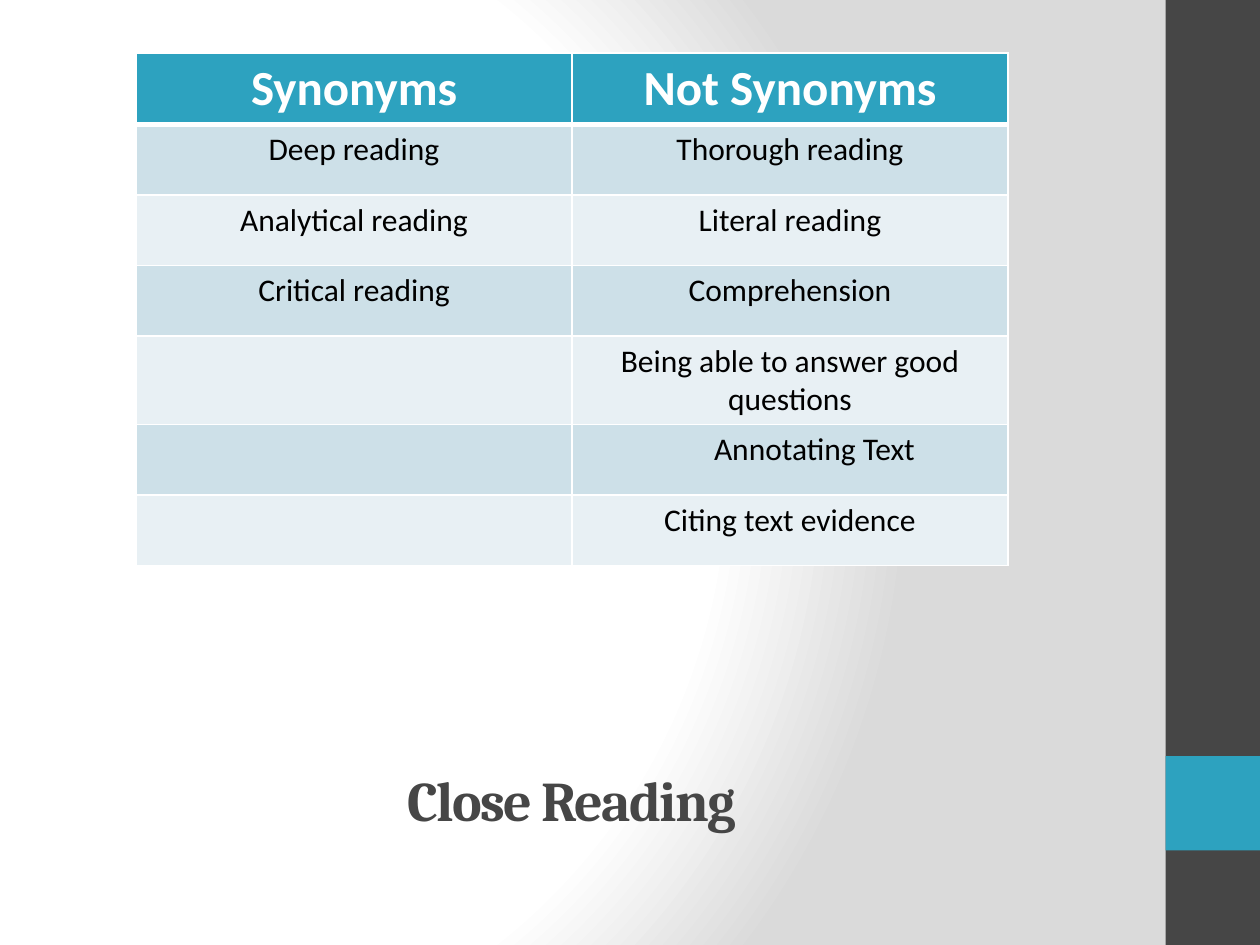
from pptx import Presentation
from pptx.dml.color import RGBColor
from pptx.enum.shapes import MSO_SHAPE
from pptx.enum.text import MSO_ANCHOR, PP_ALIGN
from pptx.oxml import parse_xml
from pptx.oxml.ns import nsdecls
from pptx.util import Inches, Pt

RECTANGLE = MSO_SHAPE.RECTANGLE
CENTER = PP_ALIGN.CENTER
BOTTOM = MSO_ANCHOR.BOTTOM

WHITE = RGBColor(0xFF, 0xFF, 0xFF)
BLACK = RGBColor(0x00, 0x00, 0x00)
SILVER = RGBColor(0xDA, 0xDA, 0xDA)
CHARCOAL = RGBColor(0x46, 0x46, 0x46)
TEAL = RGBColor(0x2D, 0xA2, 0xBF)
BANDS = RGBColor(0xE8, 0xF0, 0xF4), RGBColor(0xCD, 0xE0, 0xE8)

WIDTH, HEIGHT = Inches(10), Inches(7.5)
UNIT = HEIGHT // 10  # the sidebar is one unit wide, its accent one unit square
COLUMN, ROW = Inches(3.46), Inches(0.56)

WORDS = [
    ("Synonyms", "Not Synonyms"),
    ("Deep reading", "Thorough reading"),
    ("Analytical reading", "Literal reading"),
    ("Critical reading", "Comprehension"),
    ("", "Being able to answer good questions"),
    ("", "Annotating Text"),
    ("", "Citing text evidence"),
]


def write_text(frame, text, *, font="Calibri", size=18, color=BLACK, bold=False, spacing=0):
    """Fill the frame with one centred line; spacing is in hundredths of a point."""
    para = frame.paragraphs[0]
    para.alignment = CENTER
    para.font.size = Pt(size)
    if not text:
        return
    span = para.add_run()
    span.text = text
    span.font.name = font
    span.font.size = Pt(size)
    span.font.bold = bold
    span.font.color.rgb = color
    if spacing:
        span.font._element.set("spc", str(spacing))


def add_borders(cell, **widths):
    """Draw white borders; widths in points are keyed by side: L, R, T, B."""
    properties = cell._tc.get_or_add_tcPr()
    for side, width in widths.items():
        properties.append(parse_xml(
            f'<a:ln{side} {nsdecls("a")} w="{Pt(width)}"><a:solidFill>'
            f'<a:srgbClr val="{WHITE}"/></a:solidFill></a:ln{side}>'))


deck = Presentation()
deck.slide_width, deck.slide_height = WIDTH, HEIGHT
page = deck.slides.add_slide(deck.slide_layouts[6])

# Background: a white circle fading to silver
stops = "".join(
    f'<a:gs pos="{share * 1000}"><a:srgbClr val="{color}"/></a:gs>'
    for share, color in [(0, WHITE), (75, WHITE), (100, SILVER)])
page._element.cSld.insert(0, parse_xml(
    f'<p:bg {nsdecls("p", "a")}><p:bgPr><a:gradFill rotWithShape="1">'
    f'<a:gsLst>{stops}</a:gsLst><a:path path="circle">'
    '<a:fillToRect l="20000" t="50000" r="100000" b="50000"/></a:path>'
    '</a:gradFill><a:effectLst/></p:bgPr></p:bg>'))

# Sidebar and its accent square
for top, height, color in [(0, HEIGHT, CHARCOAL), (8 * UNIT, UNIT, TEAL)]:
    bar = page.shapes.add_shape(RECTANGLE, WIDTH - UNIT, top, UNIT, height)
    bar.shadow.inherit = False
    bar.fill.solid()
    bar.fill.fore_color.rgb = color
    bar.line.fill.background()

# Title
title = page.shapes.add_textbox(Inches(0.33), Inches(6.01), Inches(8.5), Inches(0.65))
title.text_frame.word_wrap = True
title.text_frame.vertical_anchor = BOTTOM
write_text(title.text_frame, "Close Reading ", font="Cambria", size=32,
           color=CHARCOAL, bold=True, spacing=-100)

# Table of synonyms
table = page.shapes.add_table(
    len(WORDS), 2, Inches(1.08), Inches(0.42), 2 * COLUMN, len(WORDS) * ROW).table
for row, words in enumerate(WORDS):
    table.rows[row].height = ROW
    header = row == 0
    for column, text in enumerate(words):
        cell = table.cell(row, column)
        add_borders(cell, L=1, R=1, T=3 if row == 1 else 1, B=3 if header else 1)
        cell.fill.solid()
        cell.fill.fore_color.rgb = TEAL if header else BANDS[row % 2]
        if header:
            write_text(cell.text_frame, text, size=28, color=WHITE, bold=True)
        else:
            write_text(cell.text_frame, text)
table.cell(5, 1).margin_left = Inches(0.49)

deck.save("out.pptx")
